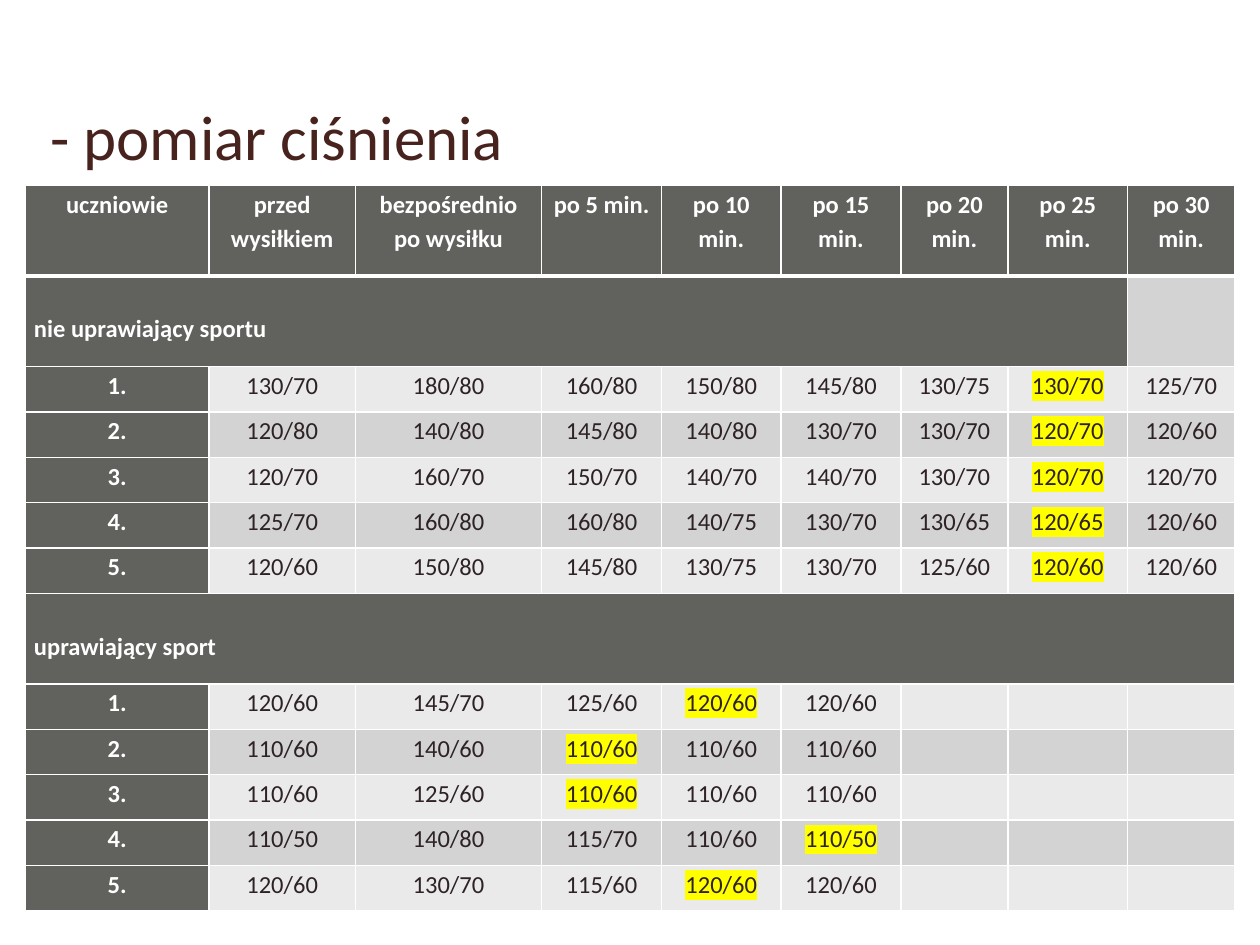
"""Build the slide with the table of blood pressure readings."""
from dataclasses import dataclass

from lxml.etree import SubElement
from pptx import Presentation
from pptx.dml.color import RGBColor
from pptx.enum.text import MSO_ANCHOR, PP_ALIGN
from pptx.oxml import parse_xml
from pptx.oxml.ns import nsdecls, qn
from pptx.slide import Slide
from pptx.table import Table, _Cell
from pptx.text.text import TextFrame
from pptx.util import Inches, Pt

WHITE = RGBColor(0xFF, 0xFF, 0xFF)
BROWN = RGBColor(0x48, 0x23, 0x1E)
INK = RGBColor(0x2E, 0x22, 0x24)
DARK = RGBColor(0x61, 0x62, 0x5E)
LIGHT = RGBColor(0xEA, 0xEA, 0xEA)
GREY = RGBColor(0xD2, 0xD3, 0xD2)
YELLOW = RGBColor(0xFF, 0xFF, 0x00)

WIDTHS = (1.46, 1.16, 1.48, 0.95, 0.95, 0.95, 0.85, 0.95, 0.85)
TALL, LOW = 0.72, 0.36
HEADS = ("uczniowie", "przed wysiłkiem", "bezpośrednio\npo wysiłku", "po 5 min.",
         *(f"po {time} min." for time in range(10, 31, 5)))


@dataclass(frozen=True)
class Group:
    """A titled set of pupils; a star marks a highlighted reading."""
    title: str
    span: int
    rows: tuple[str, ...]


GROUPS = (
    Group("nie uprawiający sportu", 8, (
        "130/70 180/80 160/80 150/80 145/80 130/75 130/70* 125/70",
        "120/80 140/80 145/80 140/80 130/70 130/70 120/70* 120/60",
        "120/70 160/70 150/70 140/70 140/70 130/70 120/70* 120/70",
        "125/70 160/80 160/80 140/75 130/70 130/65 120/65* 120/60",
        "120/60 150/80 145/80 130/75 130/70 125/60 120/60* 120/60")),
    Group("uprawiający sport", 9, (
        "120/60 145/70 125/60 120/60* 120/60",
        "110/60 140/60 110/60* 110/60 110/60",
        "110/60 125/60 110/60* 110/60 110/60",
        "110/50 140/80 115/70 110/60 110/50*",
        "120/60 130/70 115/60 120/60* 120/60")),
)


def write(frame: TextFrame, text: str, *, size: float = 14, color: RGBColor = WHITE,
          bold: bool = False, align: PP_ALIGN = PP_ALIGN.CENTER,
          space: float = 1.15, mark: bool = False) -> None:
    """Write each line of text as a formatted paragraph."""
    for num, line in enumerate(text.split("\n")):
        para = frame.add_paragraph() if num else frame.paragraphs[0]
        para.alignment = align
        para.line_spacing = space
        run = para.add_run()
        run.text = line
        run.font.size = Pt(size)
        run.font.bold = bold
        run.font.color.rgb = color
        if mark:
            light = SubElement(run._r.get_or_add_rPr(), qn("a:highlight"))
            SubElement(light, qn("a:srgbClr"), val=str(YELLOW))
        run.font.name = "Calibri"


def paint(cell: _Cell, fill: RGBColor, base: float = 1, top: float = 1) -> None:
    """Set the fill, margins and white borders of a cell."""
    cell.fill.solid()
    cell.fill.fore_color.rgb = fill
    cell.margin_left = cell.margin_right = Inches(0.07)
    cell.margin_top = cell.margin_bottom = 0
    props = cell._tc.get_or_add_tcPr()
    sides = (("L", 1), ("R", 1), ("T", top), ("B", base))
    for num, (side, width) in enumerate(sides):
        props.insert(num, parse_xml(
            f'<a:ln{side} {nsdecls("a")} w="{Pt(width)}"><a:solidFill>'
            f'<a:srgbClr val="{WHITE}"/></a:solidFill></a:ln{side}>'))


def draw_group(table: Table, group: Group, start: int) -> None:
    """Fill the title row and the reading rows of a group."""
    last = len(WIDTHS) - 1
    for col in range(last + 1):
        paint(table.cell(start, col), DARK if col < group.span else GREY,
              top=3 if start == 1 else 1)
    head = table.cell(start, 0)
    head.merge(table.cell(start, group.span - 1))
    head.margin_top = Inches(0.27)
    write(head.text_frame, group.title, bold=True, align=PP_ALIGN.LEFT)
    for num, line in enumerate(group.rows, 1):
        texts = [f"{num}.", *line.split()]
        for col in range(last + 1):
            cell = table.cell(start + num, col)
            paint(cell, DARK if col == 0 else LIGHT if num % 2 else GREY)
            if col < len(texts):
                text = texts[col]
                write(cell.text_frame, text.rstrip("*"), bold=col == 0,
                      color=INK if col else WHITE, mark=text.endswith("*"))


def draw_table(slide: Slide) -> None:
    """Add the table with its head row and groups."""
    sizes = [TALL]
    for group in GROUPS:
        sizes += [TALL] + [LOW] * len(group.rows)
    table = slide.shapes.add_table(
        len(sizes), len(WIDTHS), Inches(0.2), Inches(1.47),
        Inches(sum(WIDTHS)), Inches(sum(sizes))).table
    for col, width in zip(table.columns, WIDTHS):
        col.width = Inches(width)
    for row, size in zip(table.rows, sizes):
        row.height = Inches(size)
    for col, text in enumerate(HEADS):
        cell = table.cell(0, col)
        paint(cell, DARK, base=3)
        write(cell.text_frame, text, bold=True)
    start = 1
    for group in GROUPS:
        draw_group(table, group, start)
        start += 1 + len(group.rows)


def main() -> None:
    """Build and save the slide."""
    deck = Presentation()
    deck.slide_width, deck.slide_height = Inches(10), Inches(7.5)
    slide = deck.slides.add_slide(deck.slide_layouts[6])
    frame = slide.shapes.add_textbox(
        Inches(0.3), Inches(0.25), Inches(9.4), Inches(1.17)).text_frame
    frame.word_wrap = True
    frame.vertical_anchor = MSO_ANCHOR.BOTTOM
    write(frame, "- pomiar ciśnienia", size=36, color=BROWN,
          align=PP_ALIGN.LEFT, space=1.0)
    draw_table(slide)
    deck.save("out.pptx")


if __name__ == "__main__":
    main()
